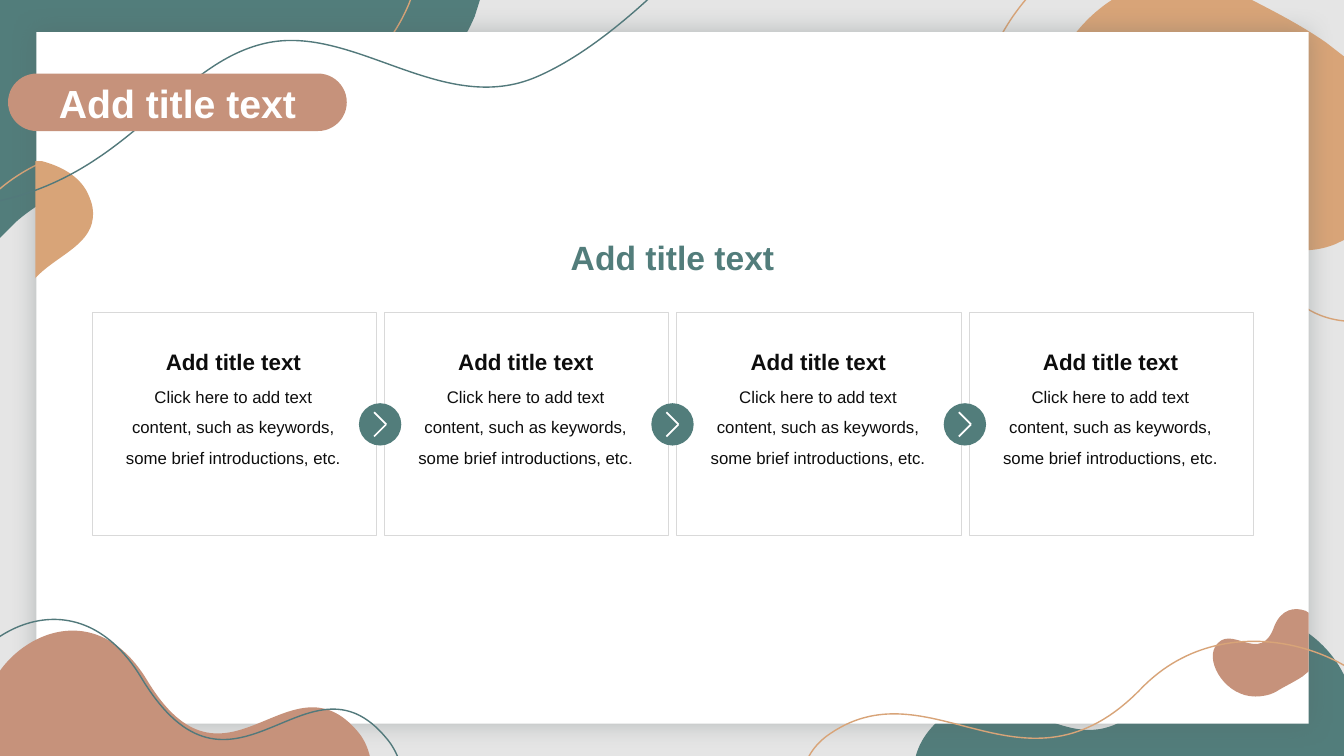
from lxml.etree import SubElement
from pptx import Presentation
from pptx.dml.color import RGBColor
from pptx.enum.shapes import MSO_CONNECTOR, MSO_SHAPE
from pptx.enum.text import MSO_ANCHOR, MSO_AUTO_SIZE, PP_ALIGN
from pptx.oxml.ns import qn
from pptx.util import Emu, Pt

SCALE = 9144  # 100 px to the inch
GREEN, LINE_GREEN, ORANGE, ROSE = "527D7B", "52797B", "D8A478", "C6927B"
WHITE, INK, BORDER = "FFFFFF", "0D0D0D", "D9D9D9"

# A path is a start point, then (x, y) for a line or (x1, y1, x2, y2, x, y) for a curve.
BACK_BLOBS = [
    (GREEN, [(1334, 751), (1340, 733, 1343, 714, 1340, 692), (1331, 629, 1224, 556, 1159, 665),
             (1071, 810, 1000, 631, 923, 723), (916, 731, 911, 740, 908, 751)]),
    (GREEN, [(0, 0), (476, 0), (471, 16), (440, 89, 365, 146, 225, 155),
             (119, 162, 54, 186, 15, 221), (0, 236)]),
    (ORANGE, [(1169, -21), (1080, -19, 1018, 81, 1047, 130), (1093, 212, 1184, 68, 1230, 196),
              (1249, 249, 1290, 256, 1325, 242), (1333, 238), (1333, 56), (1315, 42),
              (1286, 22, 1255, 7, 1234, -4), (1212, -16, 1190, -21, 1169, -21)]),
]
BACK_OUTLINES = [
    [(1161, -72), (1031, -70, 942, 76, 983, 148), (1051, 267, 1182, 57, 1249, 242),
     (1277, 320, 1336, 330, 1387, 310), (1399, 304), (1399, 39), (1373, 19),
     (1331, -10, 1285, -32, 1256, -48), (1222, -65, 1190, -73, 1161, -72)],
    [(-15, -11), (411, -11), (406, 3), (379, 69, 311, 121, 186, 129),
     (91, 136, 33, 158, -2, 189), (-15, 203)],
]
LEFT_BLOBS = [
    (ROSE, [(-8, 751), (-15, 735, -17, 718, -14, 699), (-7, 643, 88, 579, 146, 675),
            (224, 804, 287, 645, 355, 726), (361, 733, 365, 742, 367, 751)]),
    (ORANGE, [(92, 217), (89, 244, 54, 255, 35, 276), (35, 277), (35, 160), (42, 160),
              (64, 166, 81, 177, 88, 194), (92, 203, 93, 210, 92, 217)]),
]
LEFT_OUTLINE = [(-41, 761), (-48, 743, -51, 722, -48, 700), (-39, 635, 72, 560, 140, 672),
                (231, 823, 304, 637, 383, 732), (390, 740, 395, 750, 398, 761)]
TOP_WAVE = [(-479, 232), (-297, 230, -114, 228, 9, 197), (133, 165, 176, 63, 263, 43),
            (351, 23, 439, 117, 533, 76), (627, 35, 728, -85, 828, -205)]
RIGHT_BLOB = [(1245, 691), (1216, 691, 1196, 658, 1205, 642), (1220, 616, 1250, 662, 1264, 621),
              (1271, 604, 1284, 602, 1295, 606), (1298, 608), (1298, 666), (1292, 671),
              (1283, 677, 1272, 682, 1266, 686), (1259, 690, 1251, 691, 1245, 691)]
RIGHT_OUTLINE = [(1365, 755), (1374, 740, 1378, 724, 1374, 705), (1362, 653, 1220, 592, 1132, 683),
                 (1015, 804, 921, 655, 819, 731), (810, 738, 804, 746, 800, 755)]


def px(n):
    return Emu(round(n * SCALE))


def rgb(color):
    return RGBColor.from_string(color)


def pairs(seg):
    return list(zip(seg[::2], seg[1::2]))


def flatten(points, steps=24):
    """Return the path as a list of points that lie on it, for its true bounds."""
    out = [points[0]]
    for seg in points[1:]:
        if len(seg) == 2:
            out.append(seg)
            continue
        curve = [out[-1]] + pairs(seg)
        for i in range(1, steps + 1):
            t = i / steps
            weights = ((1 - t) ** 3, 3 * t * (1 - t) ** 2, 3 * t * t * (1 - t), t ** 3)
            out.append(tuple(sum(w * p[k] for w, p in zip(weights, curve)) for k in (0, 1)))
    return out


class Deck:
    """Holds the font and the current slide."""

    def __init__(self, font="Arial"):
        self.prs = Presentation()
        self.prs.slide_width, self.prs.slide_height = px(1333), px(750)
        self.font = font
        self.shapes = self.prs.slides.add_slide(self.prs.slide_layouts[6]).shapes

    def paint(self, sp, fill, line, width):
        sp.shadow.inherit = False
        if fill:
            sp.fill.solid()
            sp.fill.fore_color.rgb = rgb(fill)
        else:
            sp.fill.background()
        if line:
            sp.line.color.rgb = rgb(line)
            sp.line.width = Pt(width)
        else:
            sp.line.fill.background()
        return sp

    def shape(self, kind, x, y, w, h, fill=None, line=None, width=1, adj=None, alpha=None):
        sp = self.shapes.add_shape(kind, px(x), px(y), px(w), px(h))
        if adj is not None:
            sp.adjustments[0] = adj
        self.paint(sp, fill, line, width)
        if alpha:
            color = sp._element.spPr.find(qn("a:solidFill"))[0]
            SubElement(color, qn("a:alpha"), val=str(alpha * 1000))
        return sp

    def glow(self, sp, color, alpha, blur):
        effects = sp._element.spPr.find(qn("a:effectLst"))
        shadow = SubElement(effects, qn("a:outerShdw"), blurRad=str(Pt(blur)), dist="0", dir="0",
                            algn="ctr", rotWithShape="0")
        clr = SubElement(shadow, qn("a:srgbClr"), val=color)
        SubElement(clr, qn("a:alpha"), val=str(alpha * 1000))

    def curve(self, points, fill=None, line=None, width=1, close=True):
        """Draw a freeform, then give its outline true Bézier segments."""
        dots = [(px(x), px(y)) for x, y in flatten(points)]
        builder = self.shapes.build_freeform(*dots[0])
        builder.add_line_segments(dots[1:], close=close)
        sp = builder.convert_to_shape()
        outline = sp._element.xpath(".//a:path")[0]
        for child in list(outline):
            outline.remove(child)
        for i, seg in enumerate(points):
            tag = "a:moveTo" if i == 0 else "a:lnTo" if len(seg) == 2 else "a:cubicBezTo"
            step = SubElement(outline, qn(tag))
            for x, y in pairs(seg):
                SubElement(step, qn("a:pt"), x=str(px(x) - sp.left), y=str(px(y) - sp.top))
        if close:
            SubElement(outline, qn("a:close"))
        return self.paint(sp, fill, line, width)

    def line(self, x1, y1, x2, y2, color, width):
        cn = self.shapes.add_connector(MSO_CONNECTOR.STRAIGHT, px(x1), px(y1), px(x2), px(y2))
        cn.line.color.rgb = rgb(color)
        cn.line.width = Pt(width)
        SubElement(cn._element.spPr, qn("a:effectLst"))

    def text(self, x, y, w, h, words, size, color, bold=False, spacing=1.0, anchor=MSO_ANCHOR.TOP):
        tf = self.shapes.add_textbox(px(x), px(y), px(w), px(h)).text_frame
        tf.word_wrap = True
        tf.auto_size = MSO_AUTO_SIZE.NONE
        tf.vertical_anchor = anchor
        p = tf.paragraphs[0]
        p.alignment = PP_ALIGN.CENTER
        p.line_spacing = spacing
        r = p.add_run()
        r.text = words
        r.font.name, r.font.size, r.font.bold = self.font, Pt(size), bold
        r.font.color.rgb = rgb(color)


def draw_backdrop(deck):
    deck.shape(MSO_SHAPE.RECTANGLE, 0, -1, 1333, 752, fill="808080", alpha=20)
    for color, points in BACK_BLOBS:
        deck.curve(points, fill=color)
    for points in BACK_OUTLINES:
        deck.curve(points, line=ORANGE)
    sheet = deck.shape(MSO_SHAPE.RECTANGLE, 36, 32, 1262, 686, fill=WHITE)
    deck.glow(sheet, "566363", 35, 17)
    for color, points in LEFT_BLOBS:
        deck.curve(points, fill=color)
    deck.curve(LEFT_OUTLINE, line=LINE_GREEN)
    deck.curve(TOP_WAVE, line=LINE_GREEN, close=False)
    deck.curve(RIGHT_BLOB, fill=ROSE)
    deck.curve(RIGHT_OUTLINE, line=ORANGE)


def draw_steps(deck, count=4, left=91, pitch=290):
    title = "Add title text"
    body = "Click here to add text content, such as keywords, some brief introductions, etc."
    lefts = [left + i * pitch for i in range(count)]
    for x in lefts:
        deck.shape(MSO_SHAPE.ROUNDED_RECTANGLE, x, 310, 282, 221, line=BORDER, width=0.25, adj=0)
        deck.text(x + 22, 369, 237, 97, body, 12, INK, spacing=1.5)
        deck.text(x + 58, 340, 165, 37, title, 16, INK, bold=True)
    for x in lefts[:-1]:
        deck.shape(MSO_SHAPE.OVAL, x + 265, 400, 42, 42, fill=GREEN)
        deck.line(x + 280, 409, x + 292, 421, WHITE, 1.25)
        deck.line(x + 292, 421, x + 280, 433, WHITE, 1.25)


def main():
    deck = Deck()
    draw_backdrop(deck)
    deck.shape(MSO_SHAPE.ROUNDED_RECTANGLE, 8, 73, 336, 57, fill=ROSE, adj=0.5)
    deck.text(37, 74, 278, 57, "Add title text", 28, WHITE, bold=True)
    draw_steps(deck)
    deck.text(211, 223, 912, 57, "Add title text", 24, GREEN, bold=True, spacing=1.2,
              anchor=MSO_ANCHOR.BOTTOM)
    deck.prs.save("out.pptx")


if __name__ == "__main__":
    main()
